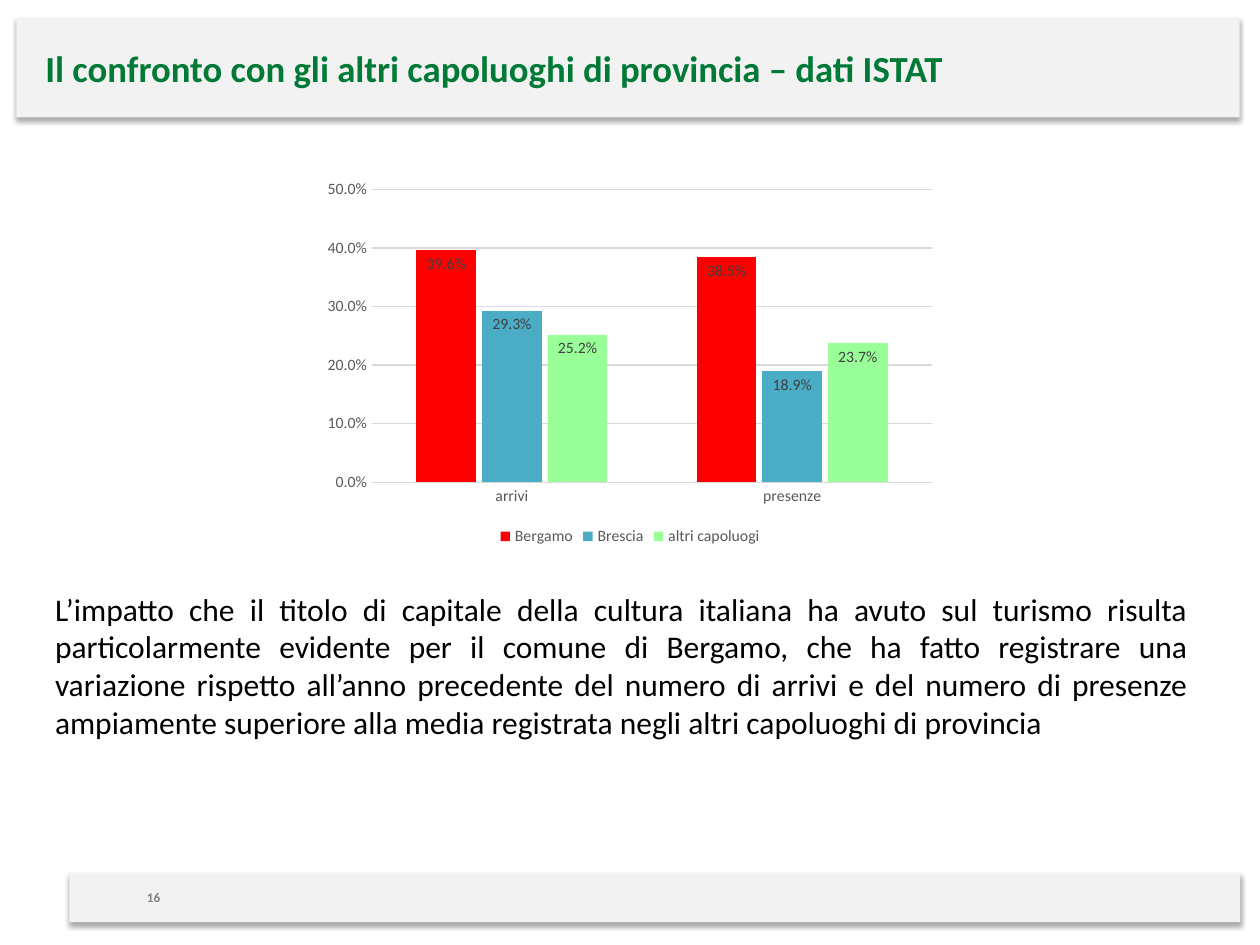
from lxml import etree
from pptx import Presentation
from pptx.chart.data import CategoryChartData
from pptx.dml.color import RGBColor
from pptx.enum.chart import XL_CHART_TYPE as ChartType, XL_LABEL_POSITION as LabelPos
from pptx.enum.chart import XL_LEGEND_POSITION as LegendPos, XL_TICK_MARK as Tick
from pptx.enum.shapes import MSO_SHAPE as Shape
from pptx.enum.text import MSO_ANCHOR as Anchor, MSO_AUTO_SIZE as AutoSize, PP_ALIGN as Align
from pptx.oxml import parse_xml
from pptx.oxml.ns import nsdecls
from pptx.util import Cm, Pt

FONT = "Calibri"
GRID = "D9D9D9"
SHADOW = (
    f'<a:effectLst {nsdecls("a")}>'
    '<a:outerShdw blurRad="39370" dist="22860" dir="5400000" rotWithShape="0">'
    '<a:srgbClr val="000000"><a:alpha val="35000"/></a:srgbClr>'
    '</a:outerShdw></a:effectLst>'
)
BODY = (
    "L’impatto che il titolo di capitale della cultura italiana ha avuto sul turismo "
    "risulta particolarmente evidente per il comune di Bergamo, che ha fatto registrare "
    "una variazione rispetto all’anno precedente del numero di arrivi e del numero di "
    "presenze ampiamente superiore alla media registrata negli altri capoluoghi di provincia"
)
SERIES = [
    ("Bergamo", (0.396, 0.385), "FF0000"),
    ("Brescia", (0.293, 0.189), "4BACC6"),
    ("altri capoluogi", (0.252, 0.237), "99FF99"),
]


def rgb(value):
    return RGBColor.from_string(value)


def style_font(font, size, color, bold=False):
    font.name = FONT
    font.size = Pt(size)
    font.bold = bold
    font.color.rgb = rgb(color)


def box(left, top, width, height):
    return Cm(left), Cm(top), Cm(width), Cm(height)


def add_band(s, *place):
    sp = s.shapes.add_shape(Shape.RECTANGLE, *box(*place))
    sp.fill.solid()
    sp.fill.fore_color.rgb = rgb("F2F2F2")
    sp.line.fill.background()
    sp.element.spPr.append(parse_xml(SHADOW))
    s.shapes.title.element.addprevious(sp.element)


def set_title(s, text, *place):
    sp = s.shapes.title
    sp.left, sp.top, sp.width, sp.height = box(*place)
    tf = sp.text_frame
    tf.text = text
    tf.auto_size = AutoSize.NONE
    tf.vertical_anchor = Anchor.MIDDLE
    p = tf.paragraphs[0]
    p.alignment = Align.LEFT
    style_font(p.font, 21, "027A37", True)


def add_text(s, text, place, align, size, color, bold=False):
    tf = s.shapes.add_textbox(*box(*place)).text_frame
    tf.word_wrap = True
    tf.text = text
    p = tf.paragraphs[0]
    p.alignment = align
    style_font(p.font, size, color, bold)


def style_axis(axis):
    axis.major_tick_mark = axis.minor_tick_mark = Tick.NONE
    style_font(axis.tick_labels.font, 9, "595959")


def style_line(line):
    line.color.rgb = rgb(GRID)
    line.width = Pt(0.75)


def style_series(ser, color):
    ser.format.fill.solid()
    ser.format.fill.fore_color.rgb = rgb(color)
    ser.invert_if_negative = False
    labels = ser.data_labels
    labels.show_value = True
    labels.position = LabelPos.INSIDE_END
    labels.number_format = "0.0%"
    labels.number_format_is_linked = False
    style_font(labels.font, 9, "404040")


def add_column_chart(s, *place):
    data = CategoryChartData(number_format="0.0%")
    data.categories = ["arrivi", "presenze"]
    for name, values, _ in SERIES:
        data.add_series(name, values)
    chart = s.shapes.add_chart(ChartType.COLUMN_CLUSTERED, *box(*place), data).chart
    style_font(chart.font, 10, "000000")
    chart.has_title = False
    chart.has_legend = True
    chart.legend.position = LegendPos.BOTTOM
    chart.legend.include_in_layout = False
    style_font(chart.legend.font, 9, "595959")

    cat, val = chart.category_axis, chart.value_axis
    style_axis(cat)
    style_axis(val)
    style_line(cat.format.line)
    style_line(val.major_gridlines.format.line)
    val.format.line.fill.background()
    val.minimum_scale, val.maximum_scale, val.major_unit = 0, 0.5, 0.1
    val.tick_labels.number_format = "0.0%"
    val.tick_labels.number_format_is_linked = False

    plot = chart.plots[0]
    plot.gap_width, plot.overlap = 150, -10
    plot.vary_by_categories = False
    for ser, (_, _, color) in zip(plot.series, SERIES):
        style_series(ser, color)


def main():
    prs = Presentation()
    prs.slide_width, prs.slide_height = Cm(25.4), Cm(19.05)
    s = prs.slides.add_slide(prs.slide_layouts[5])
    add_band(s, 0.33, 0.36, 24.66, 2.01)
    add_band(s, 1.4, 17.6, 23.6, 0.99)
    set_title(s, "Il confronto con gli altri capoluoghi di provincia – dati ISTAT",
              0.66, 0.58, 23.93, 1.57)
    add_text(s, "16", (2.06, 17.81, 1.42, 0.53), Align.RIGHT, 7.5, "808080", True)
    add_column_chart(s, 6.35, 3.48, 12.7, 7.62)
    add_text(s, BODY, (0.86, 11.76, 23.34, 3.33), Align.JUSTIFY, 18, "000000")
    prs.save("out.pptx")


if __name__ == "__main__":
    main()
